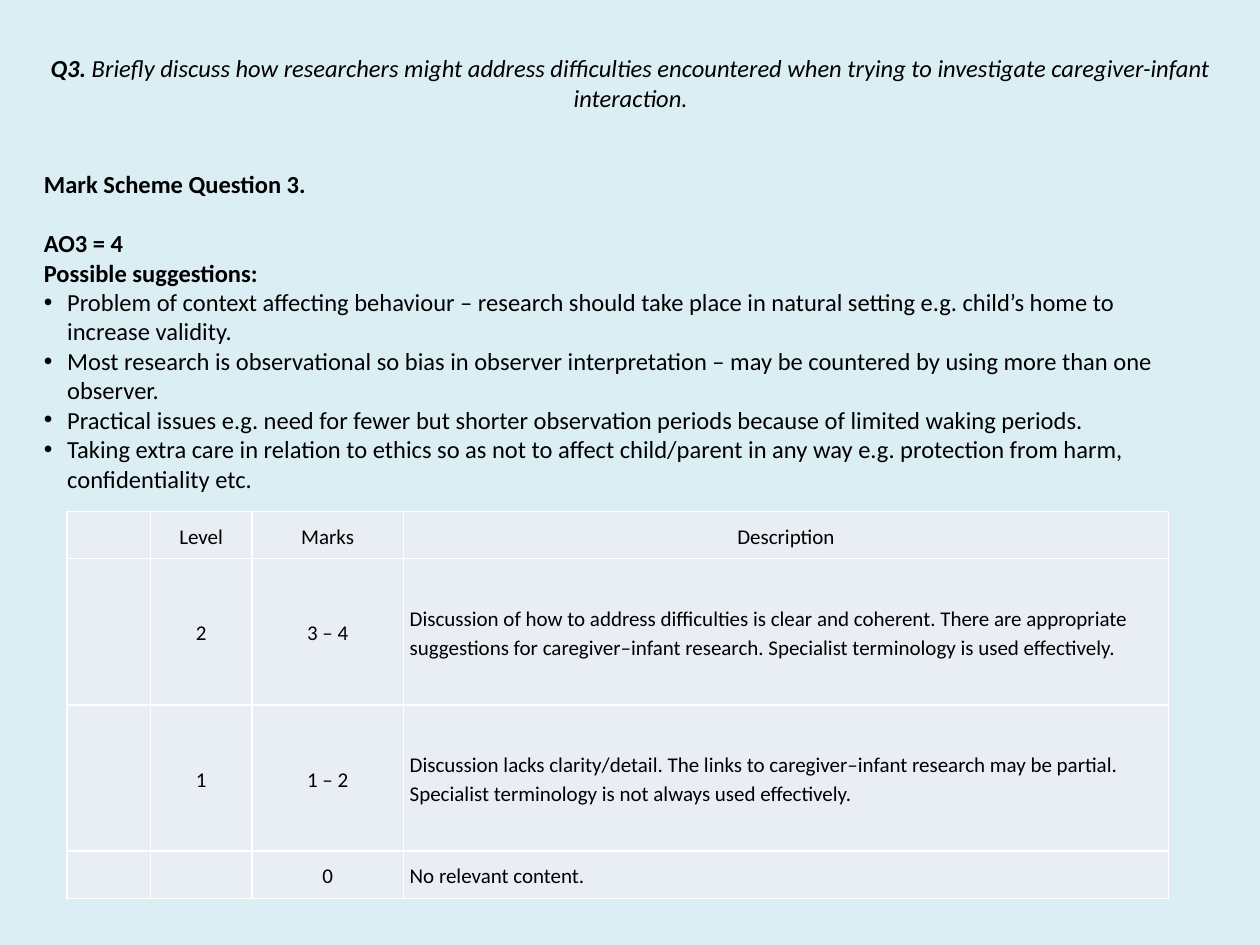
from dataclasses import dataclass

from lxml.etree import SubElement
from pptx import Presentation
from pptx.dml.color import RGBColor
from pptx.enum.text import MSO_ANCHOR as Anchor, MSO_AUTO_SIZE as AutoSize, PP_ALIGN as Align
from pptx.oxml import parse_xml
from pptx.oxml.ns import nsdecls, qn
from pptx.util import Cm, Pt


@dataclass(frozen=True)
class Theme:
    font: str = "Calibri"
    background: str = "DBEEF4"
    text: str = "000000"
    cell: str = "E9EDF4"
    border: str = "FFFFFF"
    border_pt: float = 1
    body_pt: int = 14
    table_pt: int = 12


class SlideBuilder:
    def __init__(self, prs, theme):
        self.theme = theme
        self.s = prs.slides.add_slide(prs.slide_layouts[1])
        fill = self.s.background.fill
        fill.solid()
        fill.fore_color.rgb = RGBColor.from_string(theme.background)

    def run(self, p, text, size, bold=False, italic=False):
        r = p.add_run()
        r.text = text
        r.font.name = self.theme.font
        r.font.size = Pt(size)
        r.font.bold = bold
        r.font.italic = italic
        r.font.color.rgb = RGBColor.from_string(self.theme.text)

    def place(self, sp, left, top, width, height):
        sp.left, sp.top, sp.width, sp.height = Cm(left), Cm(top), Cm(width), Cm(height)
        tf = sp.text_frame
        tf.word_wrap = True
        tf.auto_size = AutoSize.NONE
        tf.vertical_anchor = Anchor.TOP
        return tf

    def question(self, label, text, *box):
        p = self.place(self.s.shapes.title, *box).paragraphs[0]
        p.alignment = Align.CENTER
        self.run(p, label, self.theme.body_pt, bold=True, italic=True)
        self.run(p, text, self.theme.body_pt, italic=True)

    def mark_scheme(self, heading, subheadings, points, *box):
        tf = self.place(self.s.placeholders[1], *box)
        self.paragraph(tf.paragraphs[0], heading, bold=True)
        for i, text in enumerate(subheadings):
            gap = 0 if i else 17
            self.paragraph(tf.add_paragraph(), text, bold=True, before=gap)
        for text in points:
            self.paragraph(tf.add_paragraph(), text, bullet=True)

    def paragraph(self, p, text, bold=False, bullet=False, before=0):
        p.alignment = Align.LEFT
        p.space_before = Pt(before)
        indent = Cm(0.47) if bullet else 0
        pPr = p._p.get_or_add_pPr()
        pPr.set("marL", str(indent))
        pPr.set("indent", str(-indent))
        if bullet:
            SubElement(pPr, qn("a:buChar"), char="•")
        else:
            SubElement(pPr, qn("a:buNone"))
        self.run(p, text, self.theme.body_pt, bold=bold)

    def table(self, rows, widths, heights, left, top):
        frame = self.s.shapes.add_table(
            len(rows), len(widths), Cm(left), Cm(top), Cm(sum(widths)), Cm(sum(heights)))
        tbl = frame.table
        tbl.first_row = tbl.horz_banding = False
        for col, width in zip(tbl.columns, widths):
            col.width = Cm(width)
        for i, (values, height) in enumerate(zip(rows, heights)):
            tbl.rows[i].height = Cm(height)
            for j, text in enumerate(values):
                is_description = i > 0 and j == len(widths) - 1
                self.cell(tbl.cell(i, j), text, Align.LEFT if is_description else Align.CENTER)

    def cell(self, cell, text, align):
        cell.fill.solid()
        cell.fill.fore_color.rgb = RGBColor.from_string(self.theme.cell)
        cell.vertical_anchor = Anchor.MIDDLE
        cell.margin_left = cell.margin_right = Cm(0.13)
        cell.margin_top = cell.margin_bottom = 0
        tcPr = cell._tc.get_or_add_tcPr()
        for i, side in enumerate("LRTB"):
            tcPr.insert(i, parse_xml(
                f'<a:ln{side} {nsdecls("a")} w="{Pt(self.theme.border_pt)}"><a:solidFill>'
                f'<a:srgbClr val="{self.theme.border}"/></a:solidFill></a:ln{side}>'))
        if text:
            p = cell.text_frame.paragraphs[0]
            p.alignment = align
            p.line_spacing = 1.15
            p.space_before = p.space_after = Pt(6)
            self.run(p, text, self.theme.table_pt)


def main():
    prs = Presentation()
    prs.slide_width, prs.slide_height = Cm(25.4), Cm(19.05)
    slide = SlideBuilder(prs, Theme())
    slide.question(
        "Q3.",
        " Briefly discuss how researchers might address difficulties encountered when trying "
        "to investigate caregiver-infant interaction.",
        0.51, 0.95, 24.41, 1.6)
    slide.mark_scheme(
        "Mark Scheme Question 3.",
        ["AO3 = 4", "Possible suggestions:"],
        ["Problem of context affecting behaviour – research should take place in natural "
         "setting e.g. child’s home to increase validity.",
         "Most research is observational so bias in observer interpretation – may be "
         "countered by using more than one observer.",
         "Practical issues e.g. need for fewer but shorter observation periods because of "
         "limited waking periods.",
         "Taking extra care in relation to ethics so as not to affect child/parent in any "
         "way e.g. protection from harm, confidentiality etc."],
        0.63, 3.28, 23.67, 6.8)
    slide.table(
        [["", "Level", "Marks", "Description"],
         ["", "2", "3 – 4",
          "Discussion of how to address difficulties is clear and coherent. There are "
          "appropriate suggestions for caregiver–infant research. Specialist terminology is "
          "used effectively."],
         ["", "1", "1 – 2",
          "Discussion lacks clarity/detail. The links to caregiver–infant research may be "
          "partial. Specialist terminology is not always used effectively."],
         ["", "", "0", "No relevant content."]],
        [1.68, 2.05, 3.05, 15.43], [0.95, 2.95, 2.95, 0.95], 1.35, 10.31)
    prs.save("out.pptx")


if __name__ == "__main__":
    main()
